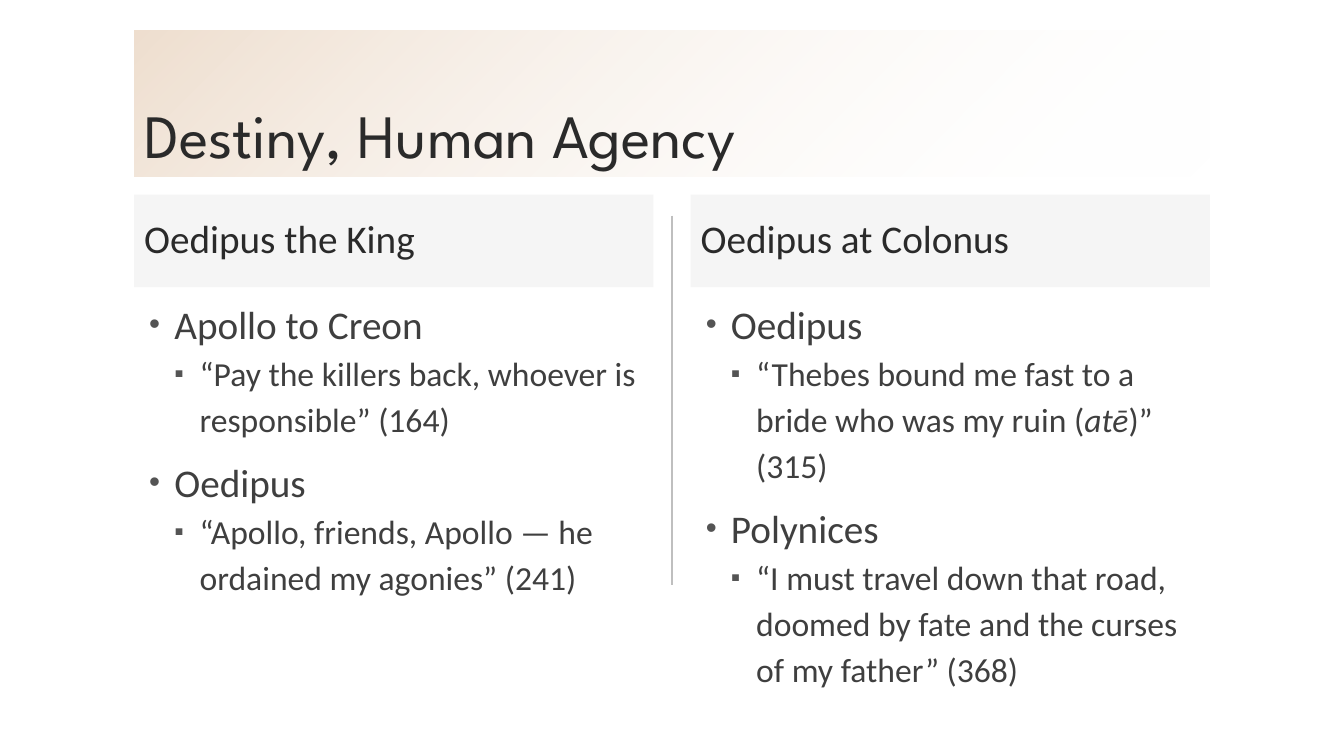
from dataclasses import dataclass

from lxml.etree import SubElement as add_element
from pptx import Presentation
from pptx.dml.color import RGBColor as Color
from pptx.enum.shapes import MSO_CONNECTOR as Connector
from pptx.enum.text import MSO_ANCHOR as Anchor, MSO_AUTO_SIZE as AutoSize, PP_ALIGN as Align
from pptx.oxml.ns import qn
from pptx.util import Inches, Pt


@dataclass(frozen=True)
class Theme:
    title_font: str = "League Spartan"
    body_font: str = "Calibri"
    title_size: int = 44
    head_size: int = 28
    quote_size: int = 24
    ink: str = "2A2A2A"
    body: str = "3F3F3F"
    bullet: str = "545454"
    rule: str = "BFBFBF"
    sand: str = "CE9F71"
    white: str = "FFFFFF"


@dataclass(frozen=True)
class Box:
    left: float
    top: float
    width: float
    height: float


THEME = Theme()
WIDTH, HEIGHT = 13.33, 7.5
MARGIN = 1.33
CONTENT = 10.67
COLUMN = 5.15
BULLETS = "•▪"

COLUMNS = [
    ("Oedipus the King", [
        ("Apollo to Creon", ["“Pay the killers back, whoever is responsible” (164)"]),
        ("Oedipus", ["“Apollo, friends, Apollo — he ordained my agonies” (241)"]),
    ]),
    ("Oedipus at Colonus", [
        ("Oedipus", ["“Thebes bound me fast to a bride who was my ruin (", "atē", ")” (315)"]),
        ("Polynices", ["“I must travel down that road, doomed by fate and the curses of my father” (368)"]),
    ]),
]


def place(shape, box, anchor):
    shape.left, shape.top = Inches(box.left), Inches(box.top)
    shape.width, shape.height = Inches(box.width), Inches(box.height)
    frame = shape.text_frame
    frame.word_wrap = True
    frame.auto_size = AutoSize.NONE
    frame.vertical_anchor = anchor
    return frame


def style(para, font, size, color, spacing, before=0):
    para.alignment = Align.LEFT
    para.line_spacing = spacing
    para.space_before, para.space_after = Pt(before), Pt(0)
    para.font.name, para.font.size = font, Pt(size)
    para.font.bold = False
    para.font.color.rgb = Color.from_string(color)


def set_alpha(fill_element, percents):
    for color, percent in zip(fill_element.iter(qn("a:srgbClr")), percents):
        add_element(color, qn("a:alpha"), val=str(percent * 1000))


def add_bullet(para, level):
    props = para._p.get_or_add_pPr()
    props.set("marL", str(Inches(0.3 + 0.25 * level)))
    props.set("indent", str(Inches(-0.25)))
    color = add_element(props, qn("a:buClr"))
    add_element(color, qn("a:srgbClr"), val=THEME.bullet)
    add_element(props, qn("a:buSzPct"), val="80000")
    add_element(props, qn("a:buFont"), typeface="Arial")
    add_element(props, qn("a:buChar"), char=BULLETS[level])


def title_band(shape, box, text):
    frame = place(shape, box, Anchor.BOTTOM)
    frame.text = text
    style(frame.paragraphs[0], THEME.title_font, THEME.title_size, THEME.ink, 0.9)
    shape.fill.gradient()
    shape.fill.gradient_angle = 315
    for stop, color, position in zip(shape.fill.gradient_stops, (THEME.sand, THEME.white), (0, 1)):
        stop.color.rgb = Color.from_string(color)
        stop.position = position
    set_alpha(shape._element.spPr, (34, 0))


def column_head(shape, box, text):
    frame = place(shape, box, Anchor.MIDDLE)
    frame.text = text
    style(frame.paragraphs[0], THEME.body_font, THEME.head_size, THEME.ink, 0.9)
    shape.fill.solid()
    shape.fill.fore_color.rgb = Color.from_string(THEME.rule)
    set_alpha(shape._element.spPr, (15,))


def quote_list(shape, box, entries):
    frame = place(shape, box, Anchor.TOP)
    para = frame.paragraphs[0]
    for index, (speaker, quote) in enumerate(entries):
        if index:
            para = frame.add_paragraph()
        para.add_run().text = speaker
        para.line_spacing = 1.14
        para.space_before = para.space_after = Pt(0)
        add_bullet(para, 0)
        style(para, THEME.body_font, THEME.head_size, THEME.body, 1.14, 9 if index else 18)

        para = frame.add_paragraph()
        para.level = 1
        for part, text in enumerate(quote):
            span = para.add_run()
            span.text = text
            if part == 1:
                span.font.italic = True
        add_bullet(para, 1)
        style(para, THEME.body_font, THEME.quote_size, THEME.body, 1.14)


def divider(page, x, top, bottom):
    line = page.shapes.add_connector(
        Connector.STRAIGHT, Inches(x), Inches(top), Inches(x), Inches(bottom))
    line.line.color.rgb = Color.from_string(THEME.rule)
    line.line.width = Pt(1)
    add_element(line._element.spPr, qn("a:effectLst"))


def comparison_slide(deck, title, columns):
    page = deck.slides.add_slide(deck.slide_layouts.get_by_name("Comparison"))
    divider(page, WIDTH / 2, 2.14, 5.8)
    title_band(page.shapes.title, Box(MARGIN, 0.3, CONTENT, 1.45), title)
    for index, (head, entries) in enumerate(columns):
        left = MARGIN + index * (CONTENT - COLUMN)
        column_head(page.placeholders[1 + 2 * index], Box(left, 1.93, COLUMN, 0.92), head)
        quote_list(page.placeholders[2 + 2 * index], Box(left, 2.86, COLUMN, 4.5), entries)


def main():
    deck = Presentation()
    deck.slide_width, deck.slide_height = Inches(WIDTH), Inches(HEIGHT)
    comparison_slide(deck, "Destiny, Human Agency", COLUMNS)
    deck.save("out.pptx")


if __name__ == "__main__":
    main()
